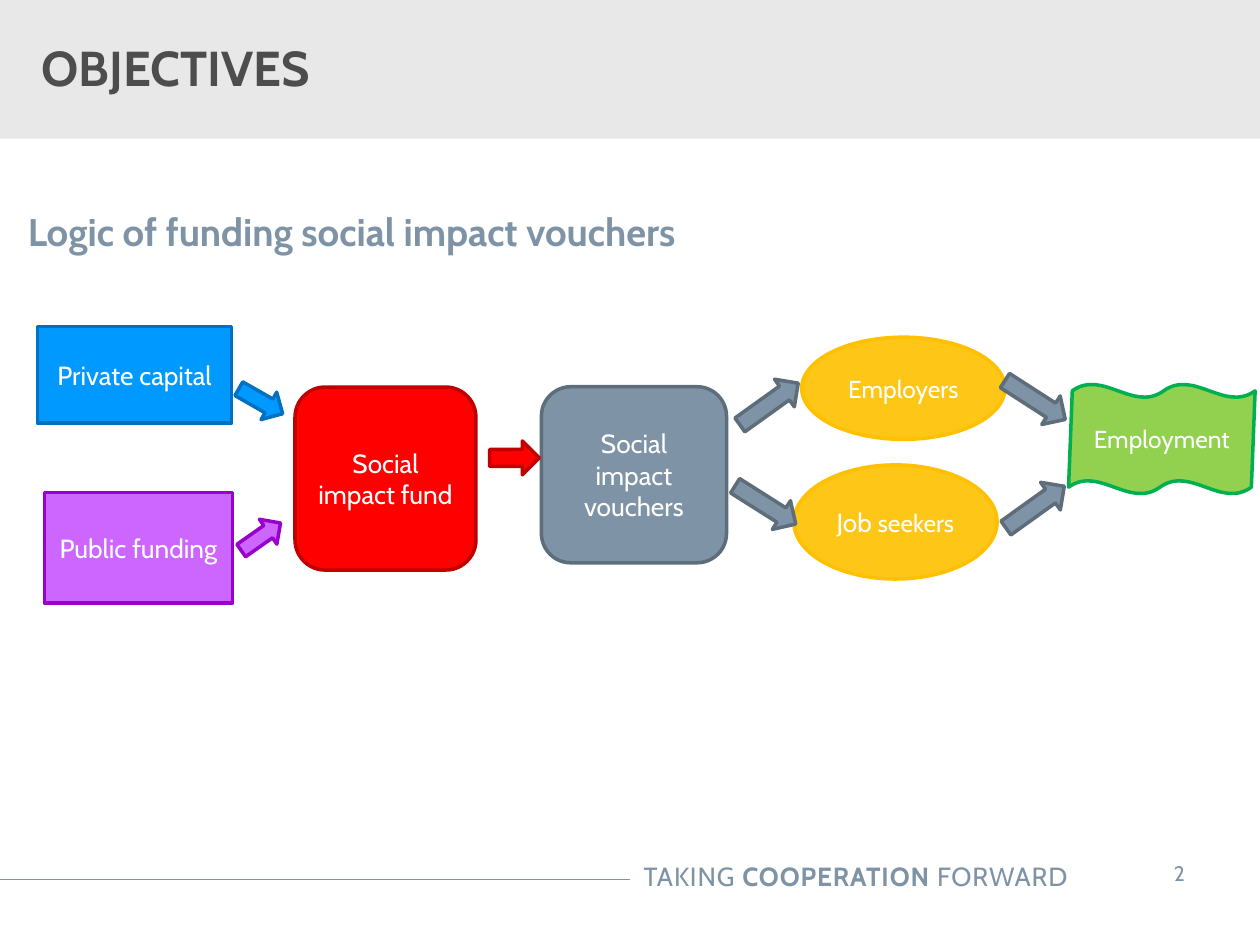
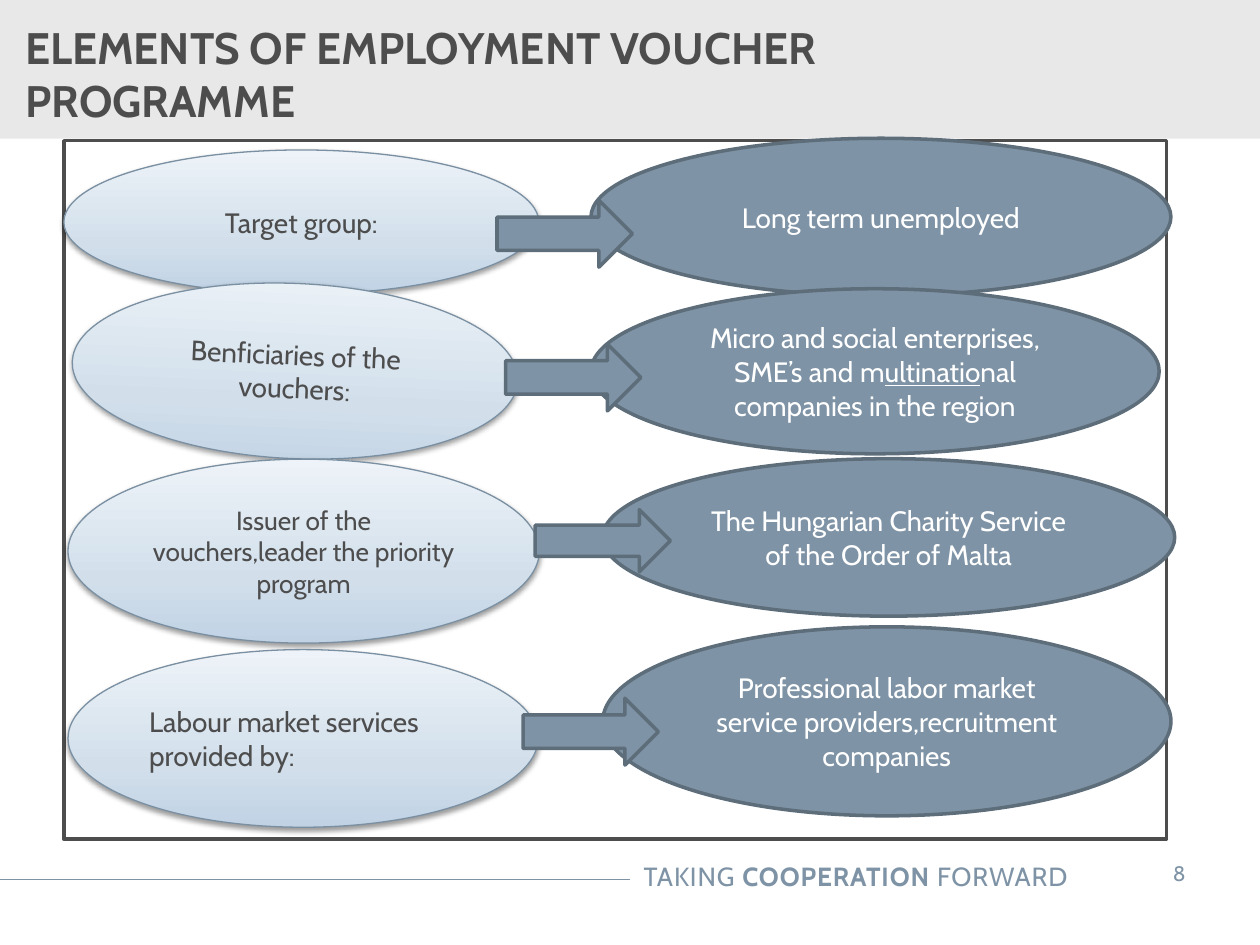
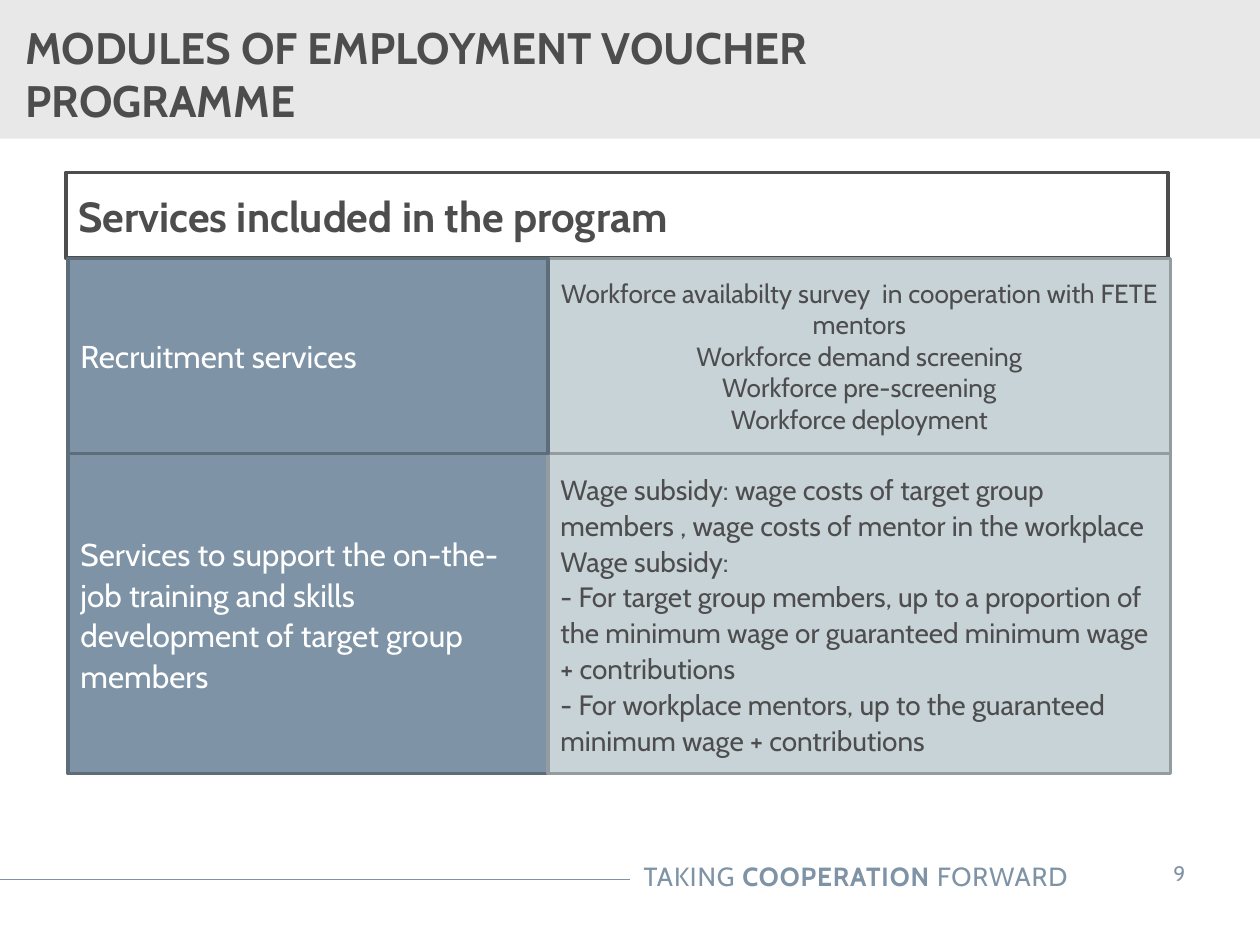
from lxml.etree import SubElement
from pptx import Presentation
from pptx.dml.color import RGBColor
from pptx.enum.shapes import MSO_CONNECTOR, MSO_SHAPE
from pptx.enum.text import MSO_ANCHOR, MSO_AUTO_SIZE, PP_ALIGN
from pptx.oxml import parse_xml
from pptx.oxml.ns import nsdecls, qn
from pptx.util import Pt

COLORS = {
    "band": "E8E8E8", "slate": "7E93A5", "slate_edge": "5D6D7A", "dark": "4D4D4E",
    "white": "FFFFFF", "red": "FF0000", "red_edge": "C00000", "blue": "0099FF",
    "blue_edge": "0070C0", "purple": "CC66FF", "purple_edge": "9900CC",
    "yellow": "FEC617", "yellow_edge": "FFC000", "green": "92D050",
    "green_edge": "00B050", "pale": "C8D3D8", "pale_edge": "949CA0",
    "gradient_edge": "7A90A2", "low": "C0D2E4", "middle": "D2DFEB", "high": "EDF3F8",
}
GRADIENT = (
    f'<a:gradFill {nsdecls("a")} rotWithShape="1"><a:gsLst>'
    + "".join(f'<a:gs pos="{position}"><a:srgbClr val="{COLORS[name]}"/></a:gs>'
              for position, name in [(0, "low"), (35000, "middle"), (100000, "high")])
    + '</a:gsLst><a:lin ang="16200000" scaled="0"/></a:gradFill>'
)
SHADOW = (
    f'<a:effectLst {nsdecls("a")}><a:outerShdw blurRad="{Pt(3.1)}" dist="{Pt(1.6)}" '
    'dir="5400000" rotWithShape="0"><a:srgbClr val="000000"><a:alpha val="38000"/>'
    '</a:srgbClr></a:outerShdw></a:effectLst>'
)
CENTER, LEFT = PP_ALIGN.CENTER, PP_ALIGN.LEFT


def write_text(shape, paragraphs, size, color, bold=False, align=LEFT, spacing=None):
    """Each paragraph is a string or a list of (text, font changes) runs."""
    frame = shape.text_frame
    frame.word_wrap = True
    for index, runs in enumerate(paragraphs):
        paragraph = frame.paragraphs[0] if index == 0 else frame.add_paragraph()
        paragraph.alignment = align
        paragraph.line_spacing = spacing
        for text, changes in [(runs, {})] if isinstance(runs, str) else runs:
            run = paragraph.add_run()
            run.text = text
            values = {"name": "Cabin", "size": Pt(size), "bold": bold} | changes
            for name, value in values.items():
                setattr(run.font, name, value)
            run.font.color.rgb = RGBColor.from_string(COLORS[color])


def add_block(slide, kind, box, fill, edge=None, width=2, rotation=0):
    shape = slide.shapes.add_shape(kind, *(Pt(value) for value in box))
    shape.shadow.inherit = False
    shape.rotation = rotation
    shape.fill.solid()
    shape.fill.fore_color.rgb = RGBColor.from_string(COLORS[fill])
    if edge:
        shape.line.color.rgb = RGBColor.from_string(COLORS[edge])
        shape.line.width = Pt(width)
    else:
        shape.line.fill.background()
    shape.text_frame.vertical_anchor = MSO_ANCHOR.MIDDLE
    return shape


presentation = Presentation()
presentation.slide_width, presentation.slide_height = Pt(720), Pt(540)
layout = presentation.slide_layouts[5]
layout_title = layout.placeholders[0]
for placeholder in list(layout.placeholders)[1:]:
    placeholder.element.getparent().remove(placeholder.element)

# Titles and page numbers
slides = []
for title_text, page, box, size, indent in [
    ("OBJECTIVES", "2", (-0.7, 11.5, 520.5, 54), 28, 24.5),
    ("ELEMENTS OF EMPLOYMENT VOUCHER PROGRAMME", "8", (7.2, 15.1, 520.5, 54), 25.2, 7.2),
    ("MODULES OF EMPLOYMENT VOUCHER PROGRAMME", "9", (7.2, 15.1, 520.5, 54), 25.2, 7.2),
]:
    slide = presentation.slides.add_slide(layout)
    slides.append(slide)
    title = slide.shapes.title
    title.left, title.top, title.width, title.height = (Pt(value) for value in box)
    title.text_frame.auto_size = MSO_AUTO_SIZE.NONE
    title.text_frame.vertical_anchor = MSO_ANCHOR.MIDDLE
    title.text_frame.margin_left = Pt(indent)
    write_text(title, [title_text], size, "dark", bold=True)

    number = slide.shapes.add_textbox(Pt(647.3), Pt(484.6), Pt(53.3), Pt(28.8))
    for side, margin in {"left": 14.4, "top": 7.2, "right": 14.4, "bottom": 7.2}.items():
        setattr(number.text_frame, f"margin_{side}", Pt(margin))
    write_text(number, [page], 12, "slate", align=CENTER)

# Band, rule and slogan, moved to the layout behind its title
flow, elements, modules = slides
rule = flow.shapes.add_connector(MSO_CONNECTOR.STRAIGHT, Pt(-0.7), Pt(502.5), Pt(360), Pt(502.5))
rule.line.color.rgb = RGBColor.from_string(COLORS["slate"])
rule.line.width = Pt(0.75)
SubElement(rule.element.spPr, qn("a:effectLst"))
band = add_block(flow, MSO_SHAPE.RECTANGLE, (0, 0, 720, 79.2), "band")
slogan = flow.shapes.add_textbox(Pt(279.4), Pt(488.2), Pt(337.7), Pt(25.2))
write_text(slogan, [[("TAKING ", {}), ("COOPERATION", {"bold": True}), (" FORWARD", {})]],
           15, "slate", align=PP_ALIGN.RIGHT)
for run in slogan.text_frame.paragraphs[0].runs:
    run.font._element.set("spc", "50")
for part in (rule, band, slogan):
    layout_title.element.addprevious(part.element)

# Slide 1: heading
heading = flow.shapes.add_textbox(Pt(10.1), Pt(115.9), Pt(523.4), Pt(33.1))
for side, margin in {"left": 5.8, "top": 2.9, "right": 5.8, "bottom": 2.9}.items():
    setattr(heading.text_frame, f"margin_{side}", Pt(margin))
write_text(heading, ["Logic of funding social impact vouchers"], 22, "slate", bold=True)

# Slide 1: stages of the funding flow
for kind, box, color, text, size in [
    (MSO_SHAPE.RECTANGLE, (21.4, 186.5, 111, 55.4), "blue", "Private capital", 15),
    (MSO_SHAPE.RECTANGLE, (25.4, 281.5, 107.5, 63.2), "purple", "Public funding", 15),
    (MSO_SHAPE.ROUNDED_RECTANGLE, (168.6, 221.2, 103.4, 104.6), "red", "Social impact fund", 15),
    (MSO_SHAPE.ROUNDED_RECTANGLE, (309.4, 221, 105.8, 100.6), "slate",
     "Social impact vouchers", 15),
    (MSO_SHAPE.OVAL, (458.1, 192.7, 116.2, 58.4), "yellow", "Employers", 14),
    (MSO_SHAPE.OVAL, (453.6, 265.7, 116.2, 65.2), "yellow",
     [("Job ", {"size": Pt(15)}), ("seekers", {})], 14),
    (MSO_SHAPE.DOUBLE_WAVE, (610.6, 219.6, 106.6, 62.6), "green", "Employment", 14),
]:
    stage = add_block(flow, kind, box, color, f"{color}_edge")
    write_text(stage, [text], size, "white", align=CENTER)
stage.adjustments[0], stage.adjustments[1] = 0.06, -0.01

# Slide 1: arrows
for box, color, rotation in [
    ((134.6, 220.3, 28.8, 18), "blue", 29.8),
    ((135.4, 298.1, 27.4, 17.3), "purple", 324.9),
    ((279.8, 252, 28.4, 19.4), "red", 0),
    ((419, 221.2, 41, 19.4), "slate", 324.4),
    ((416.9, 278.9, 41, 19.4), "slate", 32.3),
    ((571, 218.9, 41, 19.4), "slate", 32.8),
    ((571, 280.1, 41, 19.4), "slate", 324.4),
]:
    add_block(flow, MSO_SHAPE.RIGHT_ARROW, box, color, f"{color}_edge", rotation=rotation)

# Slide 2: frame, then a question and an answer per row
add_block(elements, MSO_SHAPE.RECTANGLE, (36.5, 80.4, 630, 399.2), "white", "dark")
for question_box, rotation, question, size, align, answer_box, answer in [
    ((36.5, 85.7, 271.4, 82.4), 0, ["Target group:"], 16, CENTER,
     (337.7, 79, 331.4, 90), "Long term unemployed"),
    ((41.2, 162, 254.9, 100.1), 2.5, ["Benficiaries of the vouchers:"], 16, CENTER,
     (337.7, 165, 324.7, 94.3),
     [("Micro and social enterprises, SME’s and \tm", {}),
      ("ultinatio", {"underline": True}), ("nal companies in the region", {})]),
    ((38.9, 262.4, 269.3, 105.1), 0,
     ["Issuer of the vouchers,leader the priority program"], 15, CENTER,
     (344.4, 262.1, 326.9, 90), "The Hungarian Charity Service of the Order of Malta"),
    ((38.9, 371.2, 268.6, 101.5), 0, ["Labour market services", "provided by:"], 16, LEFT,
     (344.4, 358.2, 324.7, 108),
     "Professional labor market service providers,recruitment companies"),
]:
    oval = add_block(elements, MSO_SHAPE.OVAL, question_box, "middle", "gradient_edge",
                     0.75, rotation)
    properties = oval.element.spPr
    properties.replace(properties.find(qn("a:solidFill")), parse_xml(GRADIENT))
    properties.replace(properties.find(qn("a:effectLst")), parse_xml(SHADOW))
    write_text(oval, question, size, "dark", align=align)
    oval = add_block(elements, MSO_SHAPE.OVAL, answer_box, "slate", "slate_edge")
    write_text(oval, [answer], 16, "white", align=CENTER)

for left, top, height in [(284, 114.5, 38.2), (288.9, 196.6, 38.2),
                          (305.8, 291.2, 35.6), (298.9, 399, 38.2)]:
    add_block(elements, MSO_SHAPE.RIGHT_ARROW, (left, top, 77.3, height), "slate", "slate_edge")

# Slide 3: header and the four panels
for box, fill, edge, paragraphs, style in [
    ((37.6, 98.6, 630, 49), "white", "dark", ["Services included in the program"],
     {"size": 24, "color": "dark", "bold": True}),
    ((313.2, 147.6, 355.7, 111.6), "pale", "pale_edge",
     ["Workforce availabilty survey  in cooperation with FETE mentors",
      "Workforce demand screening", "Workforce pre-screening", "Workforce deployment"],
     {"size": 15, "color": "dark", "align": CENTER}),
    ((38.9, 259.2, 274.3, 182.9), "slate", "slate_edge",
     ["Services to support the on-the-job training and skills development of target "
      "group members"],
     {"size": 18, "color": "white", "spacing": 1.07}),
    ((313.2, 259.2, 355.7, 182.9), "pale", "pale_edge",
     ["Wage subsidy: wage costs of target group members , wage costs of mentor in the "
      "workplace",
      "Wage subsidy:",
      "- For target group members, up to a proportion of the minimum wage or guaranteed "
      "minimum wage + contributions",
      "- For workplace mentors, up to the guaranteed minimum wage + contributions"],
     {"size": 16, "color": "dark", "spacing": 1.07}),
    ((38.9, 147.6, 274.3, 111.6), "slate", "slate_edge", ["Recruitment services"],
     {"size": 18, "color": "white"}),
]:
    panel = add_block(modules, MSO_SHAPE.RECTANGLE, box, fill, edge)
    write_text(panel, paragraphs, **style)

presentation.save("out.pptx")
